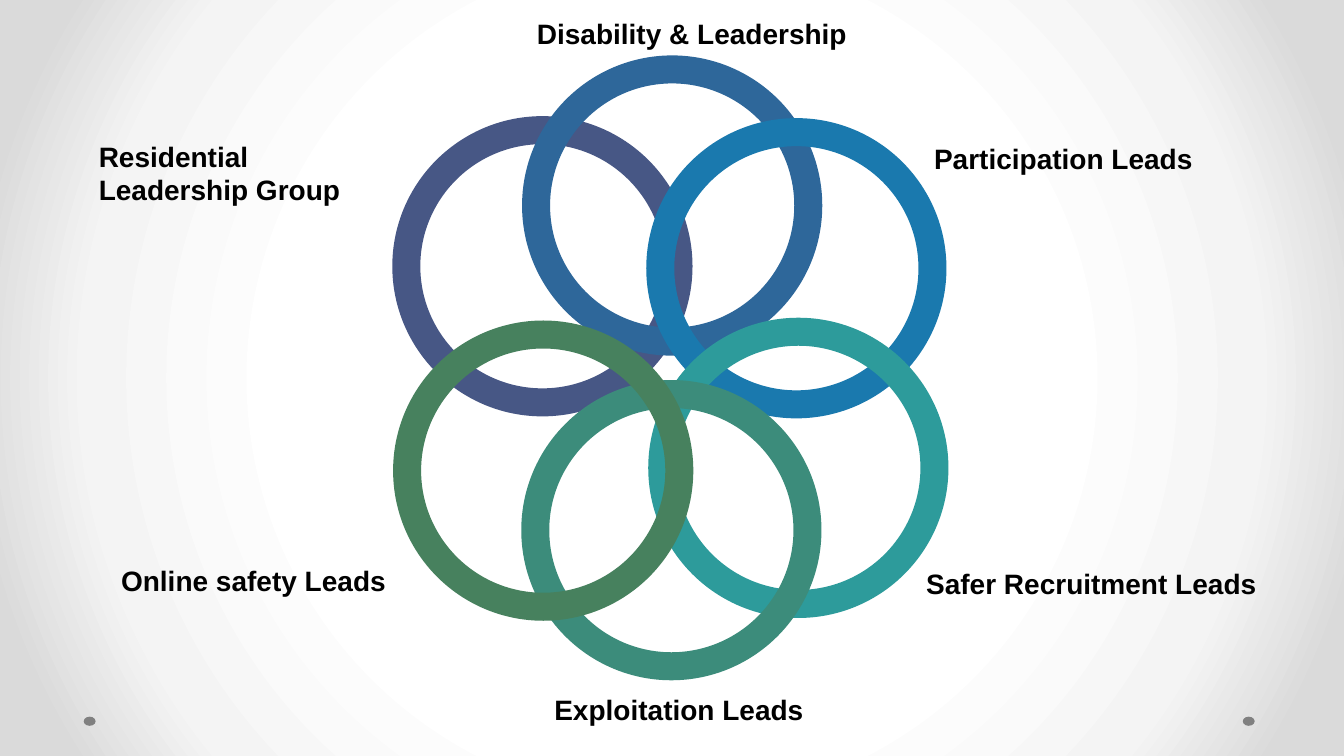
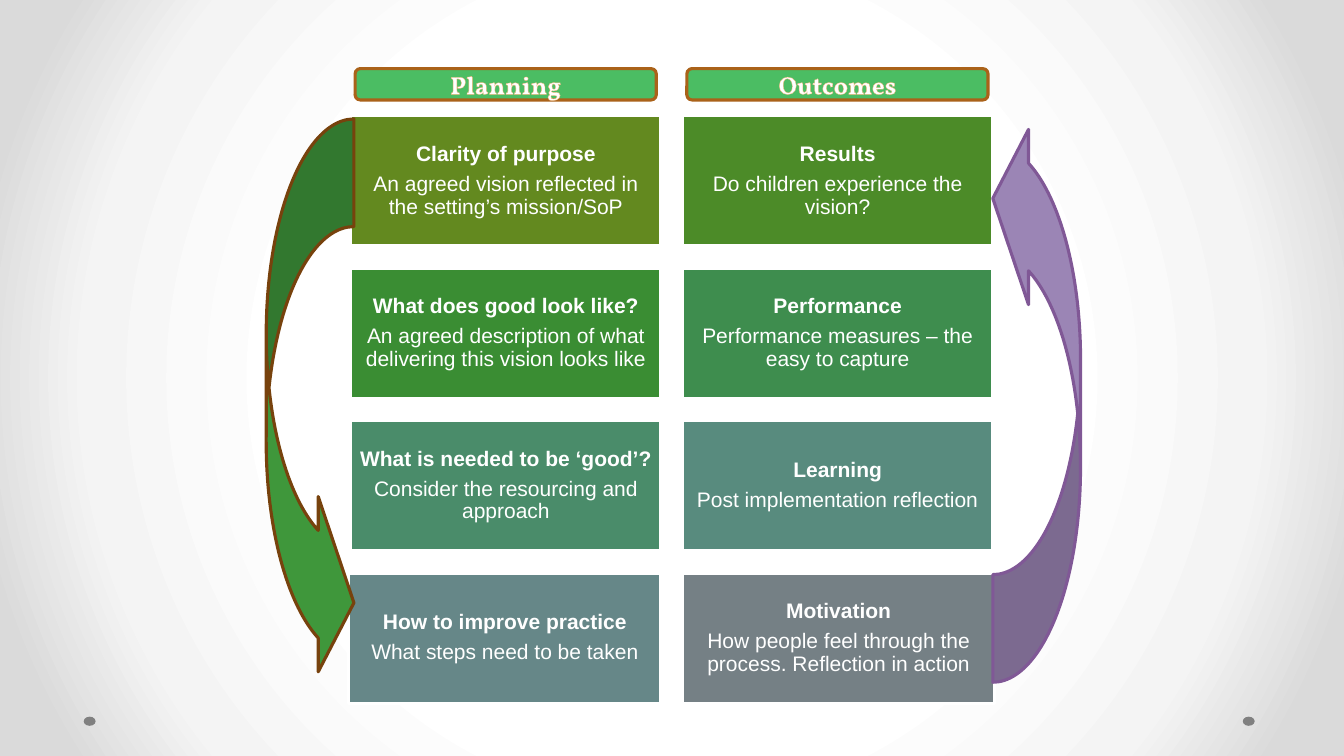
from lxml import etree
from pptx import Presentation
from pptx.dml.color import RGBColor
from pptx.enum.shapes import MSO_SHAPE
from pptx.enum.text import MSO_ANCHOR, MSO_AUTO_SIZE, PP_ALIGN
from pptx.oxml.ns import qn
from pptx.util import Cm, Pt

OVAL = MSO_SHAPE.OVAL
RECTANGLE = MSO_SHAPE.RECTANGLE
ROUNDED = MSO_SHAPE.ROUNDED_RECTANGLE
CURVED_ARROW = MSO_SHAPE.CURVED_RIGHT_ARROW
LEFT, CENTER, RIGHT = PP_ALIGN.LEFT, PP_ALIGN.CENTER, PP_ALIGN.RIGHT
MIDDLE = MSO_ANCHOR.MIDDLE
GROW = MSO_AUTO_SIZE.SHAPE_TO_FIT_TEXT

WHITE, BLACK, DOT_GREY = "FFFFFF", "000000", "808080"
HEADER_FILL, HEADER_LINE, HEADER_GLOW = "4BBD63", "AA6219", "F0B57A"
BODY_FONT, HEADER_FONT = "Arial", "Vollkorn"
BACKDROP_STOPS = [(50, "FFFFFF"), (76, "F4F4F4"), (92, "DADADA")]

RING_SIZE = 6.86
RINGS = [  # left, top, colour
    (0, 1.53, "475785"),
    (3.27, 0, "2E679A"),
    (6.4, 1.58, "1A79AE"),
    (6.45, 6.61, "2D9B9B"),
    (3.25, 8.18, "3C8C7B"),
    (0.02, 6.68, "47815E"),
]
GROUP_LABELS = [  # left, top, width, alignment, wording
    (2.24, 3.38, 8, LEFT, "Residential Leadership Group"),
    (13.28, 0.28, 8.33, LEFT, "Disability & Leadership"),
    (23.29, 3.43, 8.33, LEFT, "Participation Leads"),
    (23.09, 14.15, 9.32, LEFT, "Safer Recruitment Leads"),
    (1.65, 14.07, 8.33, RIGHT, "Online safety Leads"),
    (13.72, 17.32, 8.33, LEFT, "Exploitation Leads"),
]

CARD_W, CARD_H, COLUMN_STEP, ROW_STEP = 7.82, 3.28, 8.36, 3.84
COLUMNS = [
    ("Planning", [
        ("63891F", "Clarity of purpose",
         "An agreed vision reflected in the setting’s mission/SoP"),
        ("3A8D33", "What does good look like?",
         "An agreed description of what delivering this vision looks like"),
        ("4A8C6A", "What is needed to be ‘good’?",
         "Consider the resourcing and approach"),
        ("668788", "How to improve practice", "What steps need to be taken"),
    ]),
    ("Outcomes", [
        ("4C8B28", "Results", "Do children experience the vision?"),
        ("3E8D4E", "Performance", "Performance measures – the easy to capture"),
        ("588B7E", "Learning", "Post implementation reflection"),
        ("758085", "Motivation",
         "How people feel through the process. Reflection in action"),
    ]),
]


def rgb(hex_colour):
    return RGBColor.from_string(hex_colour)


def add_block(slide, kind, box, fill=None, line=None, line_pt=2.25):
    block = slide.shapes.add_shape(kind, *map(Cm, box))
    block.shadow.inherit = False
    if fill:
        block.fill.solid()
        block.fill.fore_color.rgb = rgb(fill)
    else:
        block.fill.background()
    if line:
        block.line.color.rgb = rgb(line)
        block.line.width = Pt(line_pt)
    else:
        block.line.fill.background()
    return block


def add_run(paragraph, text, size, colour, bold=True, font=BODY_FONT):
    run = paragraph.add_run()
    run.text = text
    run.font.name = font
    run.font.size = Pt(size)
    run.font.bold = bold
    run.font.color.rgb = rgb(colour)
    return run


def outline_text(run, colour, width_pt):
    outline = etree.Element(qn("a:ln"), w=str(Pt(width_pt)))
    solid = etree.SubElement(outline, qn("a:solidFill"))
    etree.SubElement(solid, qn("a:srgbClr"), val=colour)
    run.font._element.insert(0, outline)


def style_backdrop(master):
    """Give the master a gradient that spreads in circles from the centre."""
    master.background.fill.gradient()
    gradient = master.element.find(".//" + qn("a:gradFill"))
    for part in list(gradient):
        gradient.remove(part)
    stops = etree.SubElement(gradient, qn("a:gsLst"))
    for percent, colour in BACKDROP_STOPS:
        stop = etree.SubElement(stops, qn("a:gs"), pos=str(percent * 1000))
        etree.SubElement(stop, qn("a:srgbClr"), val=colour)
    spread = etree.SubElement(gradient, qn("a:path"), path="circle")
    etree.SubElement(spread, qn("a:fillToRect"),
                     {side: "50000" for side in "ltrb"})


def add_master_dots(master, slide):
    """Draw the two footer dots, then move them from the slide to the master."""
    for number, left in enumerate((31.32, 2.11)):
        dot = add_block(slide, OVAL, (left, 18.06, 0.3, 0.23), DOT_GREY)
        dot.element.nvSpPr.cNvPr.set("id", str(100 + number))
        master.element.cSld.spTree.append(dot.element)


def add_rings(slide, left, top):
    for dx, dy, colour in RINGS:
        add_block(slide, OVAL, (left + dx, top + dy, RING_SIZE, RING_SIZE),
                  line=colour, line_pt=20)


def add_group_label(slide, left, top, width, alignment, wording):
    label = slide.shapes.add_textbox(Cm(left), Cm(top), Cm(width), Cm(1.12))
    frame = label.text_frame
    frame.word_wrap = True
    frame.auto_size = GROW
    frame.paragraphs[0].alignment = alignment
    add_run(frame.paragraphs[0], wording, 20, BLACK)


def add_header(slide, left, top, wording):
    header = add_block(slide, ROUNDED, (left, top, 7.59, 0.79),
                       HEADER_FILL, HEADER_LINE)
    frame = header.text_frame
    frame.word_wrap = True
    frame.vertical_anchor = MIDDLE
    frame.paragraphs[0].alignment = CENTER
    run = add_run(frame.paragraphs[0], wording, 18, WHITE, font=HEADER_FONT)
    outline_text(run, HEADER_GLOW, 0.75)


def add_card(slide, box, fill, heading, detail):
    frame = add_block(slide, RECTANGLE, box, fill, WHITE).text_frame
    frame.word_wrap = True
    frame.vertical_anchor = MIDDLE
    frame.margin_left = frame.margin_right = Cm(0.15)
    frame.margin_top = frame.margin_bottom = Cm(0.15)
    for paragraph, text, bold in (
        (frame.paragraphs[0], heading, True),
        (frame.add_paragraph(), detail, False),
    ):
        paragraph.alignment = CENTER
        paragraph.line_spacing = 0.9
        paragraph.space_after = Pt(5.25)
        add_run(paragraph, text, 15, WHITE, bold)


def add_column(slide, left, top, cards, widen_left):
    """Stack the cards; the last one reaches a little further outwards."""
    for row, (fill, heading, detail) in enumerate(cards):
        extra = 0.05 if row == len(cards) - 1 else 0
        card_left = left - extra if widen_left else left
        box = (card_left, top + row * ROW_STEP, CARD_W + extra, CARD_H)
        add_card(slide, box, fill, heading, detail)


def add_cycle_arrow(slide, left, top, fill, line, rotation=0):
    arrow = add_block(slide, CURVED_ARROW, (left, top, 2.21, 14.4), fill, line)
    for index, value in enumerate((1.227, 1.999, 0.407)):
        arrow.adjustments[index] = value
    arrow.rotation = rotation


def build_groups_slide(slide):
    add_rings(slide, 10.24, 1.75)
    for label in GROUP_LABELS:
        add_group_label(slide, *label)


def build_cycle_slide(slide, left=8.84, top=2.92):
    column_lefts = [left + i * COLUMN_STEP for i in range(len(COLUMNS))]
    for column_left, (_, cards) in zip(column_lefts, COLUMNS):
        add_column(slide, column_left, top, cards, column_left == left)
    add_cycle_arrow(slide, left - 2.13, top + 0.08, "3F973B", "77420D")
    add_cycle_arrow(slide, left + 2 * COLUMN_STEP - 0.54, top - 0.13,
                    "9B85B5", "805896", 180)
    for column_left, (wording, _) in zip(column_lefts, COLUMNS):
        add_header(slide, column_left + 0.11, top - 1.19, wording)


def main():
    prs = Presentation()
    prs.slide_width, prs.slide_height = Cm(33.87), Cm(19.05)
    blank = prs.slide_layouts[6]
    groups_slide = prs.slides.add_slide(blank)
    style_backdrop(prs.slide_master)
    add_master_dots(prs.slide_master, groups_slide)
    build_groups_slide(groups_slide)
    build_cycle_slide(prs.slides.add_slide(blank))
    prs.save("out.pptx")


if __name__ == "__main__":
    main()
